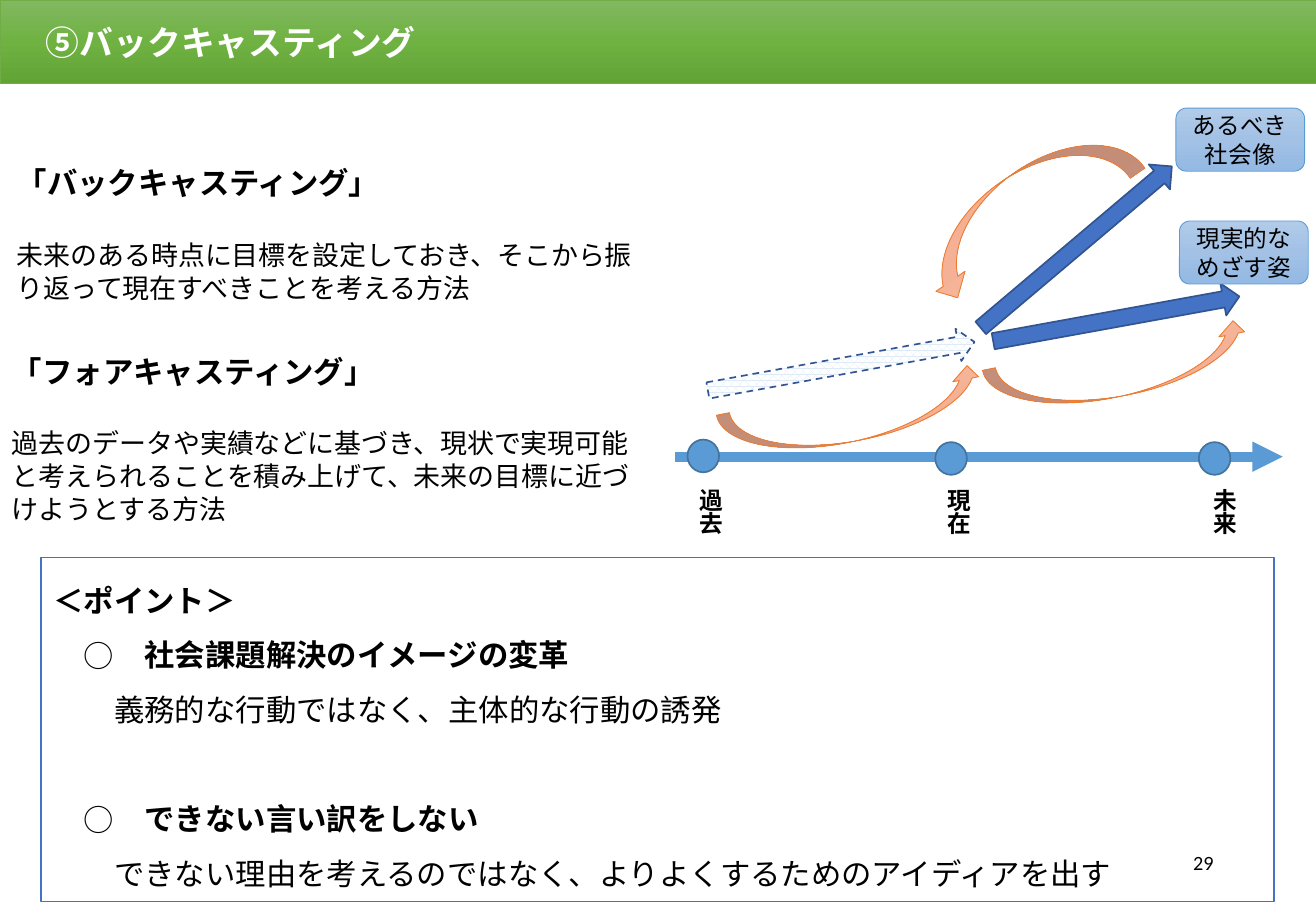
from lxml import etree
from pptx import Presentation
from pptx import util as u
from pptx.dml.color import RGBColor
from pptx.enum import dml, shapes, text
from pptx.oxml.ns import qn

COLOURS = {
    "black": "000000", "white": "FFFFFF", "sky": "5B9BD5", "sky_edge": "43739E",
    "blue": "4472C4", "navy": "325491", "pale": "DEEBF7", "green": "70AD47",
    "orange": "ED7D31",
}
GRADIENTS = {
    "green": ("81B861", "6FB242", "62A336"),
    "sky": ("B1CBE9", "A3C1E5", "93B9E4"),
    "orange": ("F7BDA5", "F5B196", "F8A582"),
}
JAPANESE = "Noto Sans CJK JP"
KIND = shapes.MSO_SHAPE
ALIGN = text.PP_ALIGN


def colour(name):
    """Return the named colour."""
    return RGBColor.from_string(COLOURS[name])


class SlideBuilder:
    """Hold the style and the current slide, and draw each kind of element."""

    def __init__(self, page):
        self.page = page

    def place(self, shape, left, top, width, height):
        """Move and size a shape in points."""
        shape.left, shape.top = u.Pt(left), u.Pt(top)
        shape.width, shape.height = u.Pt(width), u.Pt(height)

    def outline(self, shape, name, width):
        """Give a shape its line."""
        shape.line.color.rgb = colour(name)
        shape.line.width = u.Pt(width)

    def solid(self, shape, name):
        """Fill a shape with one colour."""
        shape.fill.solid()
        shape.fill.fore_color.rgb = colour(name)

    def gradient(self, shape, name):
        """Fill a shape with a three-stop gradient from top to bottom."""
        shape.fill.gradient()
        shape.fill.gradient_angle = 270
        stops = shape._element.spPr.find(".//" + qn("a:gsLst"))
        stops.clear()
        for index, value in enumerate(GRADIENTS[name]):
            stop = etree.SubElement(stops, qn("a:gs"), pos=str(index * 50000))
            etree.SubElement(stop, qn("a:srgbClr"), val=value)

    def bullet(self, para, char, margin, hang):
        """Set the bullet and indents of a paragraph."""
        properties = para._p.get_or_add_pPr()
        properties.set("marL", str(u.Pt(margin)))
        properties.set("indent", str(u.Pt(-hang)))
        if char:
            etree.SubElement(properties, qn("a:buFont"), typeface=JAPANESE)
            etree.SubElement(properties, qn("a:buChar"), char=char)
        else:
            etree.SubElement(properties, qn("a:buNone"))

    def paragraph(self, para, words, size, bold=False, name="black", font=JAPANESE,
                  align=ALIGN.LEFT, pitch=None, before=0):
        """Fill and format one paragraph."""
        para.text = words
        para.alignment = align
        para.space_before = u.Pt(before)
        para.line_spacing = u.Pt(pitch or size * 1.22)
        para.font.size, para.font.bold = u.Pt(size), bold
        para.font.color.rgb = colour(name)
        para.font.name = font
        latin = para._p.pPr.find(".//" + qn("a:latin"))
        latin.addnext(etree.Element(qn("a:ea"), typeface=font))

    def paragraphs(self, frame, count):
        """Return the first paragraph and as many more as needed."""
        return [frame.paragraphs[0]] + [frame.add_paragraph() for _ in range(count - 1)]

    def title(self, words, *area):
        """Format the title placeholder as a banner."""
        banner = self.page.shapes.title
        self.place(banner, *area)
        self.gradient(banner, "green")
        self.outline(banner, "green", 0.5)
        frame = banner.text_frame
        frame.auto_size = text.MSO_AUTO_SIZE.NONE
        frame.vertical_anchor = text.MSO_ANCHOR.MIDDLE
        frame.margin_left = u.Pt(27.2)
        self.paragraph(frame.paragraphs[0], words, 20, True, "white")

    def points(self, items, *area):
        """Format the body placeholder as the framed list of points."""
        box = self.page.placeholders[1]
        self.place(box, *area)
        self.solid(box, "white")
        self.outline(box, "blue", 1)
        box.text_frame.auto_size = text.MSO_AUTO_SIZE.NONE
        paras = self.paragraphs(box.text_frame, len(items))
        for para, (words, bold, char, margin, hang, before) in zip(paras, items):
            self.bullet(para, char, margin, hang)
            self.paragraph(para, words, 18, bold, pitch=32.4, before=before)

    def text_box(self, *area):
        """Add a wrapping text box and return its frame."""
        frame = self.page.shapes.add_textbox(*map(u.Pt, area)).text_frame
        frame.word_wrap = True
        return frame

    def definition(self, term, meaning, *area):
        """Add a bold term with its meaning below."""
        head, detail = self.paragraphs(self.text_box(*area), 2)
        self.paragraph(head, term, 18, True)
        self.paragraph(detail, meaning, 16, before=22)

    def vertical_label(self, words, *area):
        """Add a label that runs from top to bottom."""
        frame = self.text_box(*area)
        frame._txBody.bodyPr.set("vert", "eaVert")
        self.paragraph(frame.paragraphs[0], words, 14, True)

    def shape(self, kind, area, line, width, fill=None, gradient=None, turn=0):
        """Add a preset shape."""
        shape = self.page.shapes.add_shape(kind, *map(u.Pt, area))
        shape.shadow.inherit = False
        shape.rotation = turn
        self.outline(shape, line, width)
        if fill:
            self.solid(shape, fill)
        if gradient:
            self.gradient(shape, gradient)
        return shape

    def past_arrow(self, area, turn):
        """Add the dashed, patterned arrow."""
        arrow = self.shape(KIND.RIGHT_ARROW, area, "navy", 1, turn=turn)
        arrow.fill.patterned()
        arrow.fill.pattern = dml.MSO_PATTERN.PERCENT_70
        arrow.fill.fore_color.rgb = colour("pale")
        arrow.fill.back_color.rgb = colour("white")
        arrow.line.dash_style = dml.MSO_LINE.DASH

    def callout(self, lines, *area):
        """Add a rounded box with centred lines."""
        box = self.shape(KIND.ROUNDED_RECTANGLE, area, "sky", 0.5, gradient="sky")
        box.text_frame.vertical_anchor = text.MSO_ANCHOR.MIDDLE
        for para, words in zip(self.paragraphs(box.text_frame, len(lines)), lines):
            self.paragraph(para, words, 14, align=ALIGN.CENTER)

    def timeline(self, left, right, height):
        """Add the thick time axis with an arrowhead."""
        axis = self.page.shapes.add_connector(
            shapes.MSO_CONNECTOR.STRAIGHT, *map(u.Pt, (left, height, right, height)))
        self.outline(axis, "sky", 6)
        properties = axis._element.spPr
        etree.SubElement(properties.find(qn("a:ln")), qn("a:tailEnd"), type="triangle")
        etree.SubElement(properties, qn("a:effectLst"))


def main():
    """Build and save the slide."""
    deck = Presentation()
    deck.slide_width, deck.slide_height = u.Pt(780), u.Pt(540)
    slide = SlideBuilder(deck.slides.add_slide(deck.slide_layouts[1]))
    slide.title("⑤バックキャスティング", 0, 0, 780, 49.7)
    slide.points([
        ("＜ポイント＞", True, None, 0, 0, 0),
        ("社会課題解決のイメージの変革", True, "○", 54, 36, 0),
        ("義務的な行動ではなく、主体的な行動の誘発", False, None, 36, 0, 0),
        ("できない言い訳をしない", True, "○", 54, 36, 32.4),
        ("できない理由を考えるのではなく、よりよくするためのアイディアを出す",
         False, None, 36, 0, 0),
    ], 24.5, 330.5, 730.8, 203.8)
    slide.definition(
        "「バックキャスティング」",
        "未来のある時点に目標を設定しておき、そこから振り返って現在すべきことを考える方法",
        2.9, 93.6, 391, 90)
    slide.definition(
        "「フォアキャスティング」",
        "過去のデータや実績などに基づき、現状で実現可能と考えられることを積み上げて、"
        "未来の目標に近づけようとする方法",
        0, 205.2, 391, 108.7)

    slide.timeline(400.3, 760.3, 270.7)
    for words, left, top, label_left in (
            ("過去", 407.5, 260.6, 401.8),
            ("現在", 554.4, 262.1, 548.6),
            ("未来", 710.6, 262.1, 706.3)):
        slide.shape(KIND.FLOWCHART_CONNECTOR, (left, top, 18.7, 19.4), "sky_edge", 1, "sky")
        slide.vertical_label(words, label_left, 282.4, 31.7, 50.4)

    slide.past_arrow((418.3, 207.4, 160.6, 19.4), 349.7)
    for left, top, turn in ((587.5, 179.3, 349.7), (563.8, 136.8, 319.8)):
        slide.shape(KIND.RIGHT_ARROW, (left, top, 148.3, 19.4), "navy", 1, "blue", turn=turn)
    for area, turn in (
            ((534.2, 103, 145.4, 41.8), 145.3),
            ((426.2, 230.4, 159.1, 31), 348.8),
            ((583.9, 203.8, 159.1, 31), 348.8)):
        slide.shape(KIND.CURVED_UP_ARROW, area, "orange", 0.5, gradient="orange", turn=turn)
    slide.callout(("あるべき", "社会像"), 697, 64.1, 76.3, 37.4)
    slide.callout(("現実的な", "めざす姿"), 699.1, 131, 76.3, 37.4)

    number = slide.text_box(550.8, 500.4, 175.7, 28.8)
    slide.paragraph(number.paragraphs[0], "29", 12, font="Calibri", align=ALIGN.RIGHT)
    deck.save("out.pptx")


if __name__ == "__main__":
    main()
